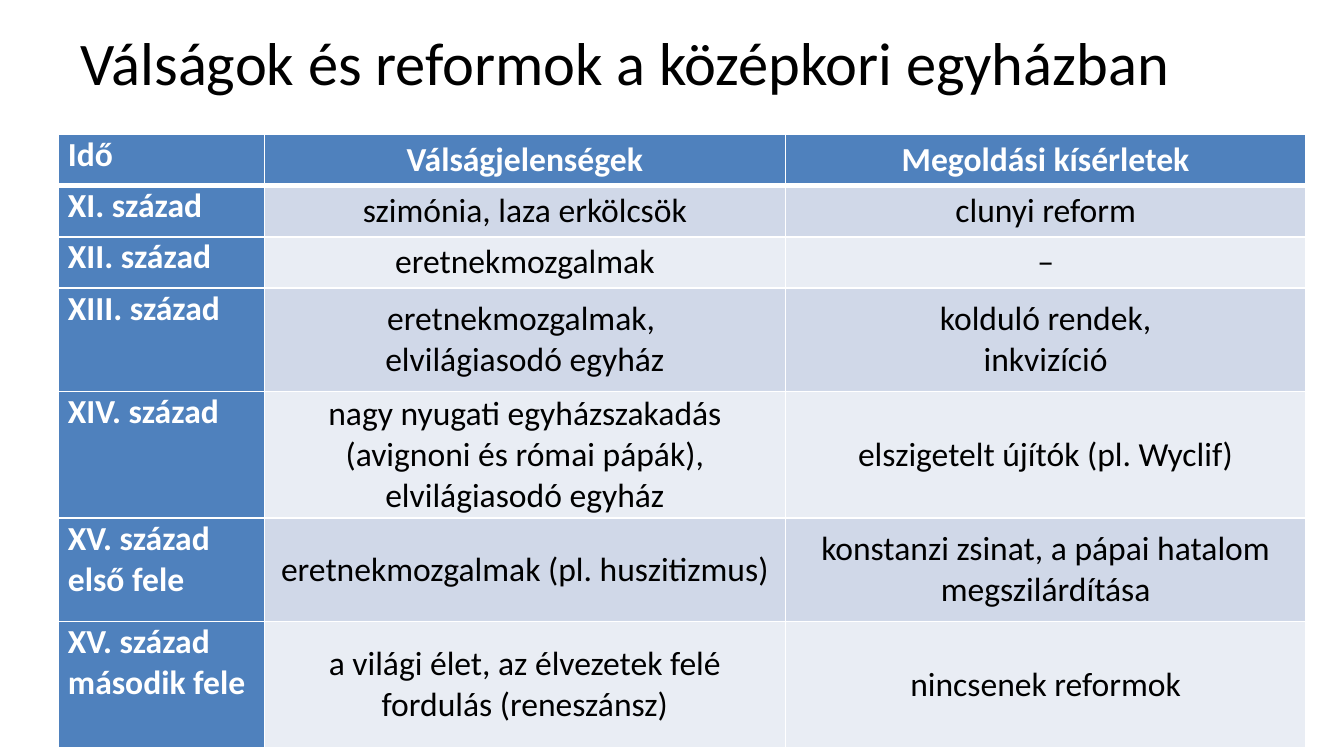
from dataclasses import dataclass

from lxml import etree
from pptx import Presentation
from pptx import util as u
from pptx.dml.color import RGBColor
from pptx.enum import text as tx
from pptx.oxml.ns import qn

PX = u.Inches(10) // 1600  # the slide is 1600 by 900 px


@dataclass(frozen=True)
class Theme:
    font: str = "Calibri"
    ink: str = "000000"
    white: str = "FFFFFF"
    head: str = "4F81BD"
    bands: tuple = ("D0D8E8", "E9EDF4")
    title: float = 32.4
    body: float = 18
    thin: int = 1
    thick: int = 3


T = Theme()

TITLE = "Válságok és reformok a középkori egyházban"
COLS = [246, 620, 620]
ROWS = [
    (61, "Idő", "Válságjelenségek", "Megoldási kísérletek"),
    (61, "XI. század", "szimónia, laza erkölcsök", "clunyi reform"),
    (61, "XII. század", "eretnekmozgalmak", "–"),
    (123, "XIII. század", "eretnekmozgalmak, \velvilágiasodó egyház",
     "kolduló rendek,\vinkvizíció"),
    (151, "XIV. század",
     "nagy nyugati egyházszakadás (avignoni és római pápák), elvilágiasodó egyház",
     "elszigetelt újítók (pl. Wyclif)"),
    (123, "XV. század első fele", "eretnekmozgalmak (pl. huszitizmus)",
     "konstanzi zsinat, a pápai hatalom megszilárdítása"),
    (151, "XV. század második fele",
     "a világi élet, az élvezetek felé fordulás (reneszánsz)",
     "nincsenek reformok"),
]


def write(frame, words, size=T.body, color=T.ink, bold=False, mid=False):
    """Fill a text frame with one formatted paragraph."""
    frame.word_wrap = True
    par = frame.paragraphs[0]
    par.text = words
    par.alignment = tx.PP_ALIGN.CENTER if mid else tx.PP_ALIGN.LEFT
    for run in par.runs:
        font = run.font
        font.name, font.size, font.bold = T.font, u.Pt(size), bold
        font.color.rgb = RGBColor.from_string(color)


def edge(cell, side, width):
    """Draw one white border; call before the cell gets its fill."""
    line = etree.SubElement(cell._tc.get_or_add_tcPr(), qn(f"a:ln{side}"),
                            w=str(u.Pt(width)))
    fill = etree.SubElement(line, qn("a:solidFill"))
    etree.SubElement(fill, qn("a:srgbClr"), val=T.white)


def heading(slide, left, top, width, height):
    box = slide.shapes.title
    box.left, box.top, box.width, box.height = (
        n * PX for n in (left, top, width, height))
    write(box.text_frame, TITLE, size=T.title)
    box.text_frame.auto_size = tx.MSO_AUTO_SIZE.NONE
    box.text_frame.vertical_anchor = tx.MSO_ANCHOR.MIDDLE


def style(cell, words, row, col):
    # Borders, with a thick rule below the header row
    for side in "LRTB":
        rule = (row, side) in ((0, "B"), (1, "T"))
        edge(cell, side, T.thick if rule else T.thin)

    # Fill: header row and first column, then alternating bands
    head = row == 0 or col == 0
    cell.fill.solid()
    cell.fill.fore_color.rgb = RGBColor.from_string(
        T.head if head else T.bands[(row - 1) % 2])

    # Text
    cell.margin_left = cell.margin_right = 12 * PX
    cell.margin_top = cell.margin_bottom = 0
    cell.vertical_anchor = tx.MSO_ANCHOR.MIDDLE if col else tx.MSO_ANCHOR.TOP
    write(cell.text_frame, words, color=T.white if head else T.ink,
          bold=head, mid=col > 0)


def grid(slide, left, top):
    size = sum(COLS), sum(row[0] for row in ROWS)
    table = slide.shapes.add_table(
        len(ROWS), len(COLS), left * PX, top * PX,
        size[0] * PX, size[1] * PX).table
    for col, width in zip(table.columns, COLS):
        col.width = width * PX
    for r, (height, *words) in enumerate(ROWS):
        table.rows[r].height = height * PX
        for c, word in enumerate(words):
            style(table.cell(r, c), word, r, c)


def main():
    deck = Presentation()
    deck.slide_width, deck.slide_height = 1600 * PX, 900 * PX
    slide = deck.slides.add_slide(deck.slide_layouts[5])
    heading(slide, 80, 22, 1440, 101)
    grid(slide, 69, 160)
    deck.save("out.pptx")


if __name__ == "__main__":
    main()
